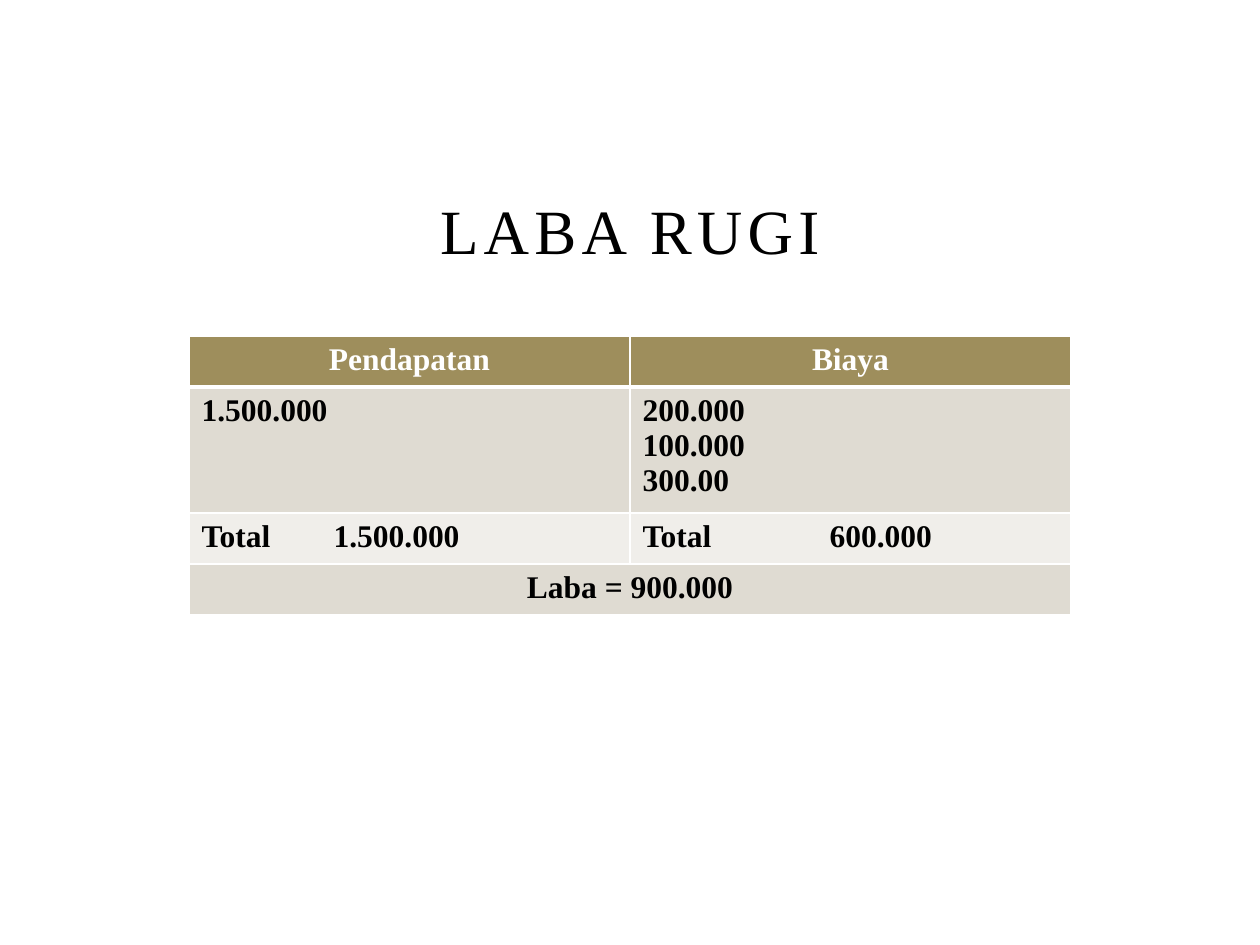
from lxml import etree
from pptx import Presentation
from pptx import util as u
from pptx.dml.color import RGBColor
from pptx.enum import text
from pptx.oxml import ns

PX = 914400 / 126
BLACK = RGBColor(0x00, 0x00, 0x00)
WHITE = RGBColor(0xFF, 0xFF, 0xFF)
OLIVE = RGBColor(0x9E, 0x8E, 0x5C)
SAND = RGBColor(0xDF, 0xDB, 0xD2)
PALE = RGBColor(0xF0, 0xEE, 0xEA)
FONT = "Times New Roman"
CENTER = text.PP_ALIGN.CENTER
LEFT = text.PP_ALIGN.LEFT


def px(length):
    return u.Emu(round(length * PX))


def add_border(cell, side, points):
    line = etree.SubElement(cell._tc.get_or_add_tcPr(), ns.qn("a:" + side), w=str(u.Pt(points)))
    fill = etree.SubElement(line, ns.qn("a:solidFill"))
    etree.SubElement(fill, ns.qn("a:srgbClr"), val=str(WHITE))


deck = Presentation()
deck.slide_width = px(1260)
deck.slide_height = px(945)
page = deck.slides.add_slide(deck.slide_layouts[6])

title = page.shapes.add_textbox(px(189), px(179), px(882), px(94)).text_frame
title.word_wrap = True
title.vertical_anchor = text.MSO_ANCHOR.BOTTOM
para = title.paragraphs[0]
para.alignment = CENTER
span = para.add_run()
span.text = "LABA RUGI"
span.font.name = FONT
span.font.size = u.Pt(36)
span.font.color.rgb = BLACK
span.font._element.set("spc", "300")

rows = [
    (51, OLIVE, WHITE, CENTER, ["Pendapatan", "Biaya"]),
    (117, SAND, BLACK, LEFT, ["1.500.000", "200.000\n100.000\n300.00"]),
    (51, PALE, BLACK, LEFT, ["Total\t1.500.000", "Total\t600.000"]),
    (51, SAND, BLACK, CENTER, ["Laba = 900.000", ""]),
]
tab_stops = [132, 187]

height = sum(row[0] for row in rows)
table = page.shapes.add_table(len(rows), 2, px(189), px(336), px(882), px(height)).table
table.horz_banding = False
for column in table.columns:
    column.width = px(441)
table.cell(3, 0).merge(table.cell(3, 1))

for r, (row_height, shade, ink, alignment, values) in enumerate(rows):
    table.rows[r].height = px(row_height)
    for c, value in enumerate(values):
        cell = table.cell(r, c)
        for side in ("lnL", "lnR", "lnT", "lnB"):
            header_edge = (r, side) in ((0, "lnB"), (1, "lnT"))
            add_border(cell, side, 3 if header_edge else 1)
        cell.fill.solid()
        cell.fill.fore_color.rgb = shade
        cell.text = value
        for para in cell.text_frame.paragraphs:
            para.alignment = alignment
            if "\t" in value:
                stops = etree.SubElement(para._p.get_or_add_pPr(), ns.qn("a:tabLst"))
                etree.SubElement(stops, ns.qn("a:tab"), pos=str(px(tab_stops[c])), algn="l")
            para.font.name = FONT
            para.font.size = u.Pt(18)
            para.font.bold = True
            para.font.color.rgb = ink

deck.save("out.pptx")
